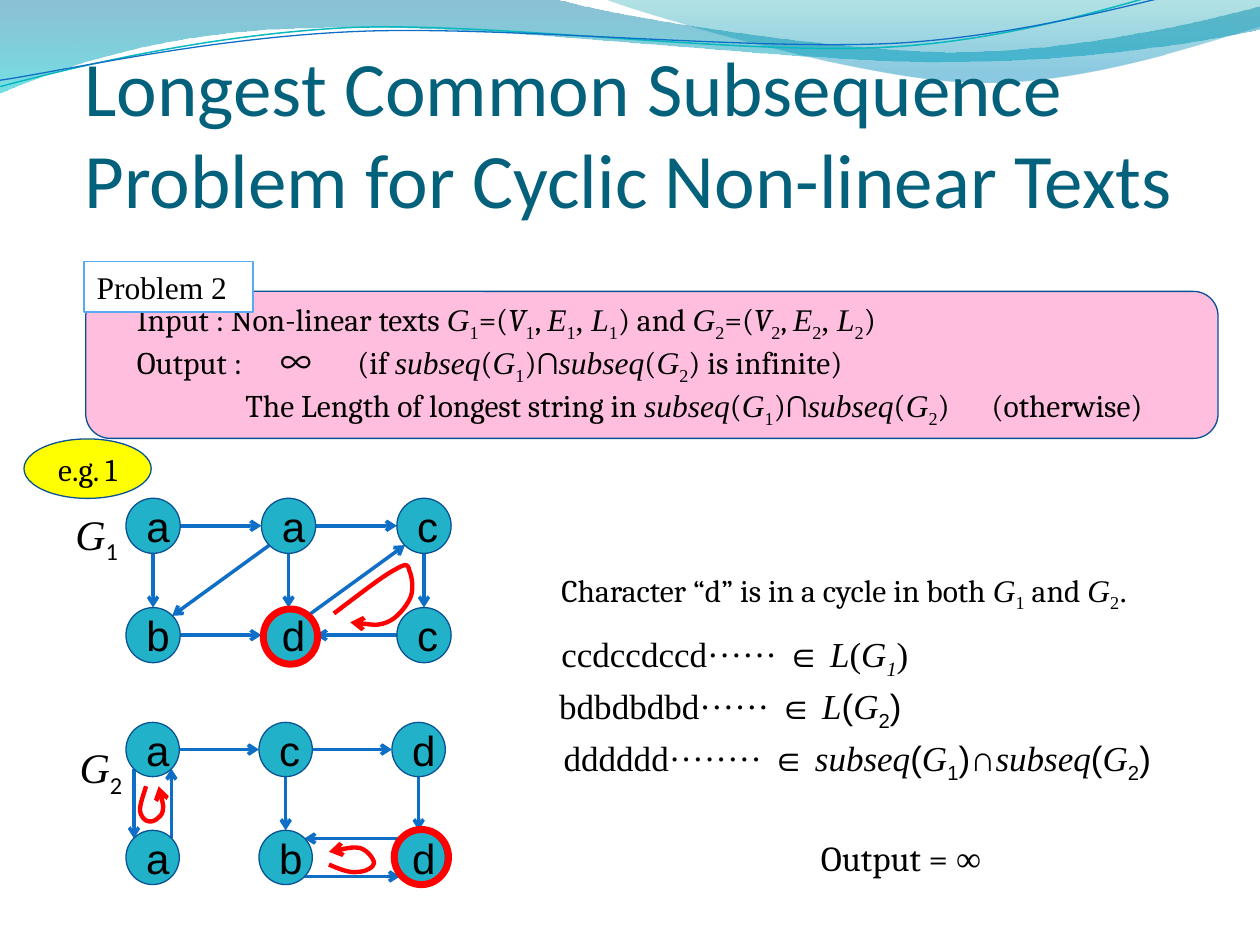
import math

from lxml import etree
from pptx import Presentation
from pptx import util as u
from pptx.dml import color as colors
from pptx.enum import shapes, text
from pptx.oxml import ns

Pt = u.Pt
SERIF, SANS = "Times New Roman", "Arial"
BLUE, NAVY, TEAL, RED = "0F6FC6", "095295", "21B2C9", "FF0000"


def paint(fill, color):
    fill.solid()
    fill.fore_color.rgb = colors.RGBColor.from_string(color)


def write(para, words, size=18, font="Cambria", subs=SERIF, slanted=False, color="000000"):
    """Add spans split at |, marked ~ serif italic, * italic, ^ serif or _ subscript."""
    for piece in words.split("|"):
        mark = piece[0] if piece[0] in "~*^_" else ""
        span = para.add_run()
        span.text = piece[len(mark):]
        span.font.size = Pt(size)
        span.font.name = {"~": SERIF, "^": SERIF, "_": subs}.get(mark, font)
        span.font.italic = mark in ("~", "*") or (mark == "_" and slanted)
        paint(span.font.fill, color)
        if mark == "_":
            span._r.get_or_add_rPr().set("baseline", "-25000")


deck = Presentation()
deck.slide_width, deck.slide_height = Pt(720), Pt(540)
page = deck.slides.add_slide(deck.slide_layouts[5])

# Outlines: a start point, then one point for each L piece and three for each C piece
waves = [
    dict(stops=[(0, "0074A1", 45), (1, "00C6CF", 55)], pieces="LCCLCCCL", points=[
        (0, -0.7), (317, -0.7), (342.7, 8), (478, 29.5), (546, 29.5),
        (614, 29.5), (690, 11.5), (720, 3.6), (720.7, 16.6),
        (708, 20), (626, 35.3), (537, 35.3), (448, 35.3), (275, 13), (185, 15.8),
        (93, 16.6), (33, 39), (-0.7, 53.3), (0, -0.7)]),
    dict(stops=[(0, "00A1A9", 30), (0.8, "008BBF", 45)], pieces="CCLL", points=[
        (345, -0.7), (366.5, 8), (491, 44.6), (553.7, 46.8), (616, 49.7), (692, 23),
        (720, 15), (720, 0), (345, -0.7)]),
    dict(line="0AB8BF", width=0.85, pieces="CCC", turn=357.3, points=[
        (-0.7, 49.7), (34.6, 40.3), (113.8, 20.2), (198.7, 15.8), (284.4, 12.2),
        (426.2, 32.4), (512.6, 26.6), (599, 20.9), (675.4, -9.4), (718.6, -18.7)]),
    dict(line=BLUE, width=0.75, pieces="CCC", turn=357.3, points=[
        (-0.7, 46), (33.8, 41), (118, 21.6), (203.8, 18), (289.4, 14.4),
        (429.8, 29.5), (515.5, 24.5), (602, 18.7), (677.5, -6.5), (720, -14.4)]),
]
cycles = [dict(line=RED, width=2.5, arrow=True, pieces="C" * (len(points) // 3),
               turn=turn, points=points) for turn, points in (
    (0, [(190.8, 350.6), (205.2, 339.8), (218.9, 329), (226, 325.4), (233.3, 321),
         (233.3, 323.3), (234, 326.2), (235.4, 329), (236.9, 337.7), (234, 342.7),
         (231.8, 347), (226.8, 353.5), (221, 355.7), (215.3, 357.8), (208, 356.4),
         (200.2, 355.7)]),
    (0, [(83.5, 449.3), (82, 454.3), (80, 459.4), (80, 463), (80, 465.8), (82.8, 469.4),
         (85, 469.4), (87, 470.2), (92.2, 467.3), (93, 463.7), (93.6, 460), (92.2, 455),
         (90.7, 449.3)]),
    (270, [(188, 494), (194.4, 496.8), (200.2, 499), (204.5, 498.2), (208.8, 498.2),
           (213.8, 495.4), (213.8, 493.2), (213.8, 491), (210.2, 486), (206, 484.6),
           (201.6, 483.8), (195, 485.3), (188, 486.7)]),
)]
for curve in waves + cycles:
    turn = curve.get("turn", 0)
    cos, sin = math.cos(math.radians(-turn)), math.sin(math.radians(-turn))
    middle_x, middle_y = [(min(side) + max(side)) / 2 for side in zip(*curve["points"])]
    outline = []
    for x, y in curve["points"]:
        dx, dy = x - middle_x, y - middle_y
        outline.append((Pt(middle_x + dx * cos - dy * sin), Pt(middle_y + dx * sin + dy * cos)))
    builder = page.shapes.build_freeform(*outline[0])
    builder.add_line_segments(outline[1:], close="stops" in curve)
    shape = builder.convert_to_shape()
    shape.rotation = turn
    shape.shadow.inherit = False
    geometry = shape.element.spPr
    segments = iter(list(geometry.iter(ns.qn("a:lnTo"))))
    for piece in curve["pieces"]:
        first = next(segments)
        if piece == "C":
            bend = etree.Element(ns.qn("a:cubicBezTo"))
            first.addprevious(bend)
            for segment in (first, next(segments), next(segments)):
                bend.append(segment[0])
                segment.getparent().remove(segment)
    if "stops" in curve:
        shape.line.fill.background()
        shape.fill.gradient()
        shape.fill.gradient_angle = 270
        for stop, (position, color, _) in zip(shape.fill.gradient_stops, curve["stops"]):
            stop.position = position
            stop.color.rgb = colors.RGBColor.from_string(color)
        for tint, (_, _, alpha) in zip(geometry.iter(ns.qn("a:srgbClr")), curve["stops"]):
            etree.SubElement(tint, ns.qn("a:alpha"), val=str(alpha * 1000))
    else:
        shape.fill.background()
        paint(shape.line.fill, curve["line"])
        shape.line.width = Pt(curve["width"])
    if "arrow" in curve:
        etree.SubElement(geometry.find(ns.qn("a:ln")), ns.qn("a:tailEnd"), type="arrow")
    else:
        page.slide_layout.shapes.element.append(shape.element)  # waves belong to the layout

title = page.shapes.title
title.left, title.top, title.width, title.height = Pt(48.3), Pt(38), Pt(648), Pt(90)
frame = title.text_frame
frame.auto_size = text.MSO_AUTO_SIZE.NONE
frame.vertical_anchor = text.MSO_ANCHOR.BOTTOM
frame.margin_left = frame.margin_right = frame.margin_bottom = 0
frame.paragraphs[0].alignment = text.PP_ALIGN.LEFT
write(frame.paragraphs[0], "Longest Common Subsequence　Problem for Cyclic Non-linear Texts",
      size=44, font="Calibri", color="04617B")

# Filled shapes: kind, box, fill, line, line width, words and their format
KIND = shapes.MSO_SHAPE
forms = [
    (KIND.ROUNDED_RECTANGLE, (49, 166.5, 647, 84), "FFBEDE", NAVY, 0.75, "", {}),
    (KIND.RECTANGLE, (48.2, 149.5, 96.5, 29), "FFFFFF", "59AAF2", 1, "Problem 2",
     dict(font=SERIF)),
    (KIND.OVAL, (13.7, 250.8, 72.7, 34), "FFFF00", NAVY, 0.75, "e.g. 1", {}),
]

# Graphs: first node, gaps between columns and rows, node size, letters, edges
graphs = [
    ((72, 284.7), (77.4, 62.5), (31, 31.5), "aacbdc",
     "0e-1w 1e-2w 3e-4w 5w-4e 0s-3n 1s-4n 2s-5n 4ne-2sw 1sw-3ne"),
    ((72, 412.8), (76, 61.7), (30.5, 31), "acdabd",
     "0e-1w 1e-2w 1s-4n 2s-5n 0sw-3nw 3ne-0se 5nw-4ne 4se-5sw"),
]
sites = dict(n=(0.5, 0), s=(0.5, 1), w=(0, 0.5), e=(1, 0.5),
             nw=(0.15, 0.15), ne=(0.85, 0.15), sw=(0.15, 0.85), se=(0.85, 0.85))
for (left, top), (across, down), (width, height), letters, edges in graphs:
    corners = [(left + i % 3 * across, top + i // 3 * down) for i in range(6)]
    for corner, letter in zip(corners, letters):
        forms.append((KIND.OVAL, (*corner, width, height), TEAL, NAVY, 0.75, letter,
                      dict(size=24, font=SANS)))
    for edge in edges.split():
        ends = []
        for end in edge.split("-"):
            x, y = corners[int(end[0])]
            dx, dy = sites[end[1:]]
            ends += [Pt(x + dx * width), Pt(y + dy * height)]
        link = page.shapes.add_connector(shapes.MSO_CONNECTOR.STRAIGHT, *ends)
        paint(link.line.fill, BLUE)
        link.line.width = Pt(2)
        stroke = link.element.spPr.find(ns.qn("a:ln"))
        etree.SubElement(stroke, ns.qn("a:tailEnd"), type="arrow")
        etree.SubElement(link.element.spPr, ns.qn("a:effectLst"))

for left, top in ((150.5, 348), (225.3, 474)):
    forms.append((KIND.OVAL, (left, top, 31, 31.5), None, RED, 4, "", {}))

drawn = []
for kind, box, fill, line, weight, words, style in forms:
    shape = page.shapes.add_shape(kind, *map(Pt, box))
    shape.shadow.inherit = False
    if fill:
        paint(shape.fill, fill)
    else:
        shape.fill.background()
    paint(shape.line.fill, line)
    shape.line.width = Pt(weight)
    frame = shape.text_frame
    frame.vertical_anchor = text.MSO_ANCHOR.MIDDLE
    frame.word_wrap = len(words) != 1
    para = frame.paragraphs[0]
    para.alignment = text.PP_ALIGN.CENTER if fill == "FFFF00" else text.PP_ALIGN.LEFT
    if words:
        write(para, words, **style)
    drawn.append(shape)

# Problem statement
COMMON = "|~subseq|(|~G|_1|)∩|~subseq|(|~G|_2|)"
TRIPLE = "|~G|_{0}|=(|*V|_{0}|, |~E|_{0}|^,|~ L|_{0}|)"
statement = [
    ([], "　Input : Non-linear texts " + TRIPLE.format(1) + " and " + TRIPLE.format(2)),
    ([144], "　Output : 　∞\t(if " + COMMON + " is infinite)"),
    ([80, 506.5], "\tThe Length of longest string in " + COMMON + "\t(otherwise)"),
]
frame = drawn[0].text_frame
for row, (stops, words) in enumerate(statement):
    para = frame.add_paragraph() if row else frame.paragraphs[0]
    para.alignment = text.PP_ALIGN.LEFT
    if stops:
        tabs = etree.SubElement(para._p.get_or_add_pPr(), ns.qn("a:tabLst"))
        for stop in stops:
            etree.SubElement(tabs, ns.qn("a:tab"), pos=str(Pt(stop)), algn="l")
    write(para, words)

# Free text: box, then spans with their format
plain = dict(size=20, font=SERIF)
sans = dict(size=20, font=SANS, subs=SANS)
label = dict(size=24, subs="Calibri")
notes = [
    ((36, 287, 48, 36), [("~G|_1", label)]),
    ((38.4, 420.2, 48, 36), [("~G|_2", label)]),
    ((313.7, 322.5, 382, 29), [("Character “d” is in a cycle in both |~G|_1| and |~G|_2|^.", {})]),
    ((313.7, 358, 382, 32), [("ccdccdccd······ ∈ |~L|(|~G|_1|)", dict(plain, slanted=True))]),
    ((312.5, 387.5, 382, 32), [("bdbdbdbd······ ∈ ", plain), ("~L|(|~G|_2|)", sans)]),
    ((315, 417.5, 379, 32), [("dddddd········ ∈ ", plain), (COMMON[1:], sans)]),
    ((462, 474.5, 127, 32), [("Output = ", dict(size=20)), ("∞", plain)]),
]
for box, spans in notes:
    frame = page.shapes.add_textbox(*map(Pt, box)).text_frame
    frame.word_wrap = True
    for words, style in spans:
        write(frame.paragraphs[0], words, **style)

deck.save("out.pptx")
